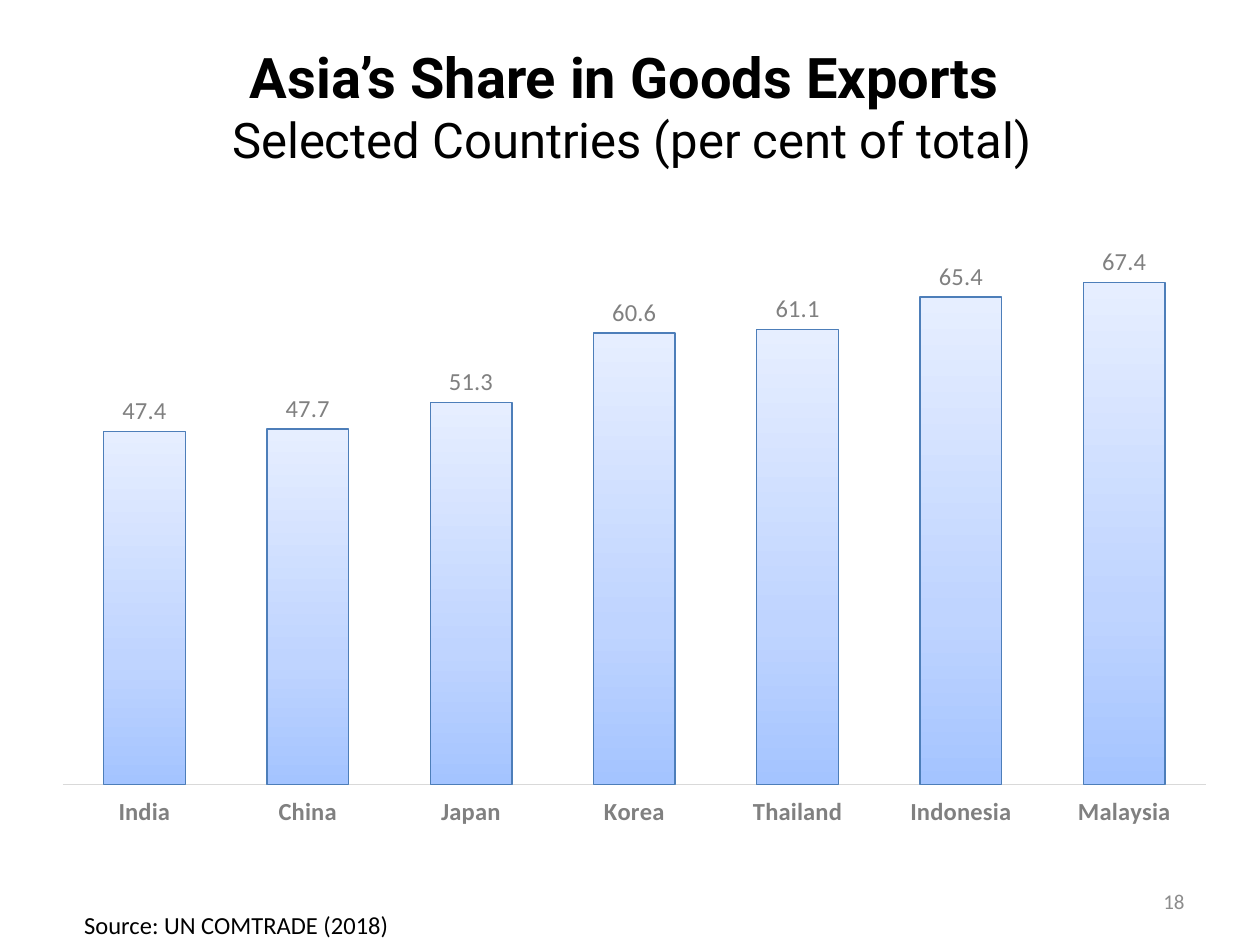
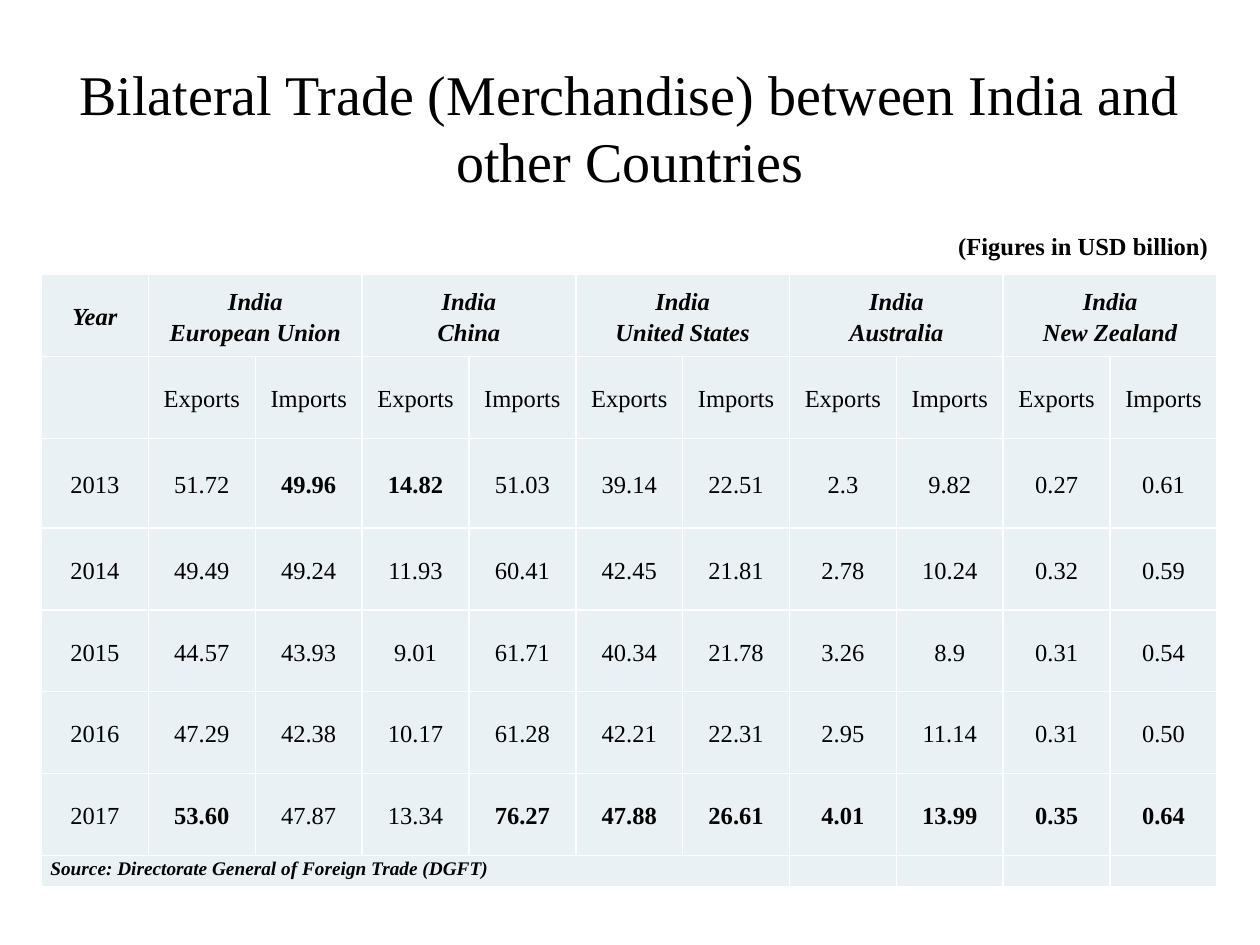
from lxml.etree import SubElement
from pptx import Presentation
from pptx.chart.data import CategoryChartData as ChartData
from pptx.dml.color import RGBColor as RGB
from pptx.enum.chart import XL_CHART_TYPE as Kind
from pptx.enum.chart import XL_LABEL_POSITION as Pos
from pptx.enum.chart import XL_TICK_LABEL_POSITION as TickPos
from pptx.enum.chart import XL_TICK_MARK as Tick
from pptx.enum.text import MSO_ANCHOR as Anchor
from pptx.enum.text import MSO_AUTO_SIZE as Fit
from pptx.enum.text import PP_ALIGN as Align
from pptx.oxml.ns import qn
from pptx.util import Inches, Pt

SANS, HEAD, SERIF = "Calibri", "Roboto", "Times New Roman"
BLACK, WHITE, GREY, PALE = "000000", "FFFFFF", "808080", "E9F1F5"
RULE, NUMBER, EDGE = "D9D9D9", "8C8C8C", "4D7EB9"
BAR_STOPS = [(0, "A4C4FF"), (35, "BFD4FF"), (100, "E6EEFF")]

SHARES = {"India": 47.4, "China": 47.7, "Japan": 51.3, "Korea": 60.6,
          "Thailand": 61.1, "Indonesia": 65.4, "Malaysia": 67.4}
SHARE_TITLE = "Asia’s Share in Goods Exports "
SHARE_SUB = "Selected Countries (per cent of total)"
SHARE_SOURCE = "Source: UN COMTRADE (2018)"

TRADE_TITLE = "Bilateral Trade (Merchandise) between India and other Countries"
UNIT = "(Figures in USD billion)"
PARTNERS = ["European Union", "China", "United States", "Australia",
            "New Zealand"]
# Exports and imports per partner; a star marks a bold figure.
TRADE = {
    "2013": "51.72 49.96* 14.82* 51.03 39.14 22.51 2.3 9.82 0.27 0.61",
    "2014": "49.49 49.24 11.93 60.41 42.45 21.81 2.78 10.24 0.32 0.59",
    "2015": "44.57 43.93 9.01 61.71 40.34 21.78 3.26 8.9 0.31 0.54",
    "2016": "47.29 42.38 10.17 61.28 42.21 22.31 2.95 11.14 0.31 0.50",
    "2017": "53.60* 47.87 13.34 76.27* 47.88* 26.61* 4.01* 13.99* 0.35* 0.64*",
}
TRADE_SOURCE = "Source: Directorate General of Foreign Trade (DGFT)"
ROWS = [0.36, 0.65, 0.65, 0.71, 0.65, 0.65, 0.65, 0.65, 0.25]


def box(*sizes):
    return [Inches(size) for size in sizes]


def color(code):
    return RGB.from_string(code)


def style(font, name, size, code=BLACK, bold=False, italic=False):
    font.name, font.size = name, Pt(size)
    font.bold, font.italic = bold, italic
    font.color.rgb = color(code)


def add_slide(deck, *place):
    """Add a slide and return it with the paragraph of its placed title."""
    slide = deck.slides.add_slide(deck.slide_layouts[5])
    title = slide.shapes.title
    title.left, title.top, title.width, title.height = box(*place)
    frame = title.text_frame
    frame.auto_size = Fit.NONE
    frame.vertical_anchor = Anchor.MIDDLE
    para = frame.paragraphs[0]
    para.alignment = Align.CENTER
    return slide, para


def add_note(slide, text, place, size, code, align, anchor):
    frame = slide.shapes.add_textbox(*box(*place)).text_frame
    frame.word_wrap = True
    frame.vertical_anchor = anchor
    para = frame.paragraphs[0]
    para.text, para.alignment = text, align
    style(para.font, SANS, size, code)


def shade(series):
    """Fill the bars with a gradient that runs upwards."""
    fill = series.format.fill
    fill.gradient()
    fill.gradient_angle = 90
    stops = next(series.format.fill.gradient_stops[0]._gs.iterancestors())
    stops.clear()
    for spot, code in BAR_STOPS:
        stop = SubElement(stops, qn("a:gs"), pos=str(spot * 1000))
        SubElement(stop, qn("a:srgbClr"), val=code)


def add_bars(slide):
    data = ChartData(number_format="0.0")
    data.categories = list(SHARES)
    data.add_series("Series 1", list(SHARES.values()))
    chart = slide.shapes.add_chart(
        Kind.COLUMN_CLUSTERED, *box(0.31, 1.39, 9.45, 5.28), data).chart
    chart.has_legend = chart.has_title = False
    style(chart.font, SANS, 14)

    cats, vals = chart.category_axis, chart.value_axis
    cats.major_tick_mark = cats.minor_tick_mark = Tick.NONE
    cats.tick_label_position = TickPos.LOW
    style(cats.tick_labels.font, SANS, 14, GREY, bold=True)
    cats.format.line.color.rgb = color(RULE)
    cats.format.line.width = Pt(0.75)
    vals.visible = vals.has_major_gridlines = False
    vals.minimum_scale, vals.maximum_scale = 0, 80

    plot = chart.plots[0]
    plot.gap_width, plot.overlap = 100, -24
    plot.vary_by_categories = False
    series = plot.series[0]
    shade(series)
    series.format.line.color.rgb = color(EDGE)
    series.format.line.width = Pt(0.75)
    labels = series.data_labels
    labels.show_value, labels.position = True, Pos.OUTSIDE_END
    labels.number_format, labels.number_format_is_linked = "0.0", False
    style(labels.font, SANS, 14, GREY)


def edge(cell):
    """Draw the four borders of a cell; call it before the fill is set."""
    props = cell._tc.get_or_add_tcPr()
    for side in "LRTB":
        line = SubElement(props, qn(f"a:ln{side}"), w=str(Pt(1)))
        SubElement(SubElement(line, qn("a:solidFill")),
                   qn("a:srgbClr"), val=WHITE)


def write(cell, text, size=14, bold=False, italic=False,
          align=Align.CENTER, anchor=Anchor.MIDDLE):
    cell.text, cell.vertical_anchor = text, anchor
    for para in cell.text_frame.paragraphs:
        para.alignment, para.line_spacing = align, 1.15
        style(para.font, SERIF, size, BLACK, bold, italic)


def add_trade(slide):
    count = 1 + 2 * len(PARTNERS)
    table = slide.shapes.add_table(
        len(ROWS), count, *box(0.33, 1.82, 9.33, sum(ROWS))).table
    table.first_row = table.horz_banding = False
    for col in table.columns:
        col.width = Inches(9.33 / count)
    for row, high in zip(table.rows, ROWS):
        row.height = Inches(high)
    for at, row in enumerate(table.rows):
        for cell in row.cells:
            edge(cell)
            cell.fill.solid()
            cell.fill.fore_color.rgb = color(PALE if at else WHITE)
            cell.margin_left = cell.margin_right = Inches(0.07)
            cell.margin_top = cell.margin_bottom = 0
            SubElement(cell.text_frame.paragraphs[0]._p,
                       qn("a:endParaRPr"), sz="1100")

    last = len(ROWS) - 1
    table.cell(0, 0).merge(table.cell(0, count - 1))
    write(table.cell(0, 0), UNIT, bold=True, align=Align.RIGHT,
          anchor=Anchor.TOP)
    write(table.cell(1, 0), "Year", bold=True, italic=True)
    for i, name in enumerate(PARTNERS):
        left = 1 + 2 * i
        table.cell(1, left).merge(table.cell(1, left + 1))
        write(table.cell(1, left), f"India\n{name}", bold=True, italic=True)
        write(table.cell(2, left), "Exports")
        write(table.cell(2, left + 1), "Imports")
    for at, (year, line) in enumerate(TRADE.items(), 3):
        for col, value in enumerate([year, *line.split()]):
            write(table.cell(at, col), value.rstrip("*"),
                  bold=value.endswith("*"))
    table.cell(last, 0).merge(table.cell(last, 6))
    write(table.cell(last, 0), TRADE_SOURCE, 11, True, True,
          Align.LEFT, Anchor.TOP)


def main():
    deck = Presentation()
    deck.slide_width, deck.slide_height = box(10, 7.5)

    slide, title = add_slide(deck, 0.35, 0.05, 9.33, 1.57)
    run = title.add_run()
    run.text = SHARE_TITLE
    style(run.font, HEAD, 32, bold=True)
    title.add_line_break()
    run = title.add_run()
    run.text = SHARE_SUB
    style(run.font, HEAD, 28)
    add_note(slide, SHARE_SOURCE, (0.57, 7.17, 3.83, 0.34), 14, BLACK,
             Align.LEFT, Anchor.TOP)
    add_note(slide, "18", (7.17, 6.95, 2.33, 0.4), 12, NUMBER,
             Align.RIGHT, Anchor.MIDDLE)
    add_bars(slide)

    slide, title = add_slide(deck, 0.5, 0.38, 9, 1.25)
    title.text = TRADE_TITLE
    style(title.font, SERIF, 32)
    add_trade(slide)

    deck.save("out.pptx")


if __name__ == "__main__":
    main()
